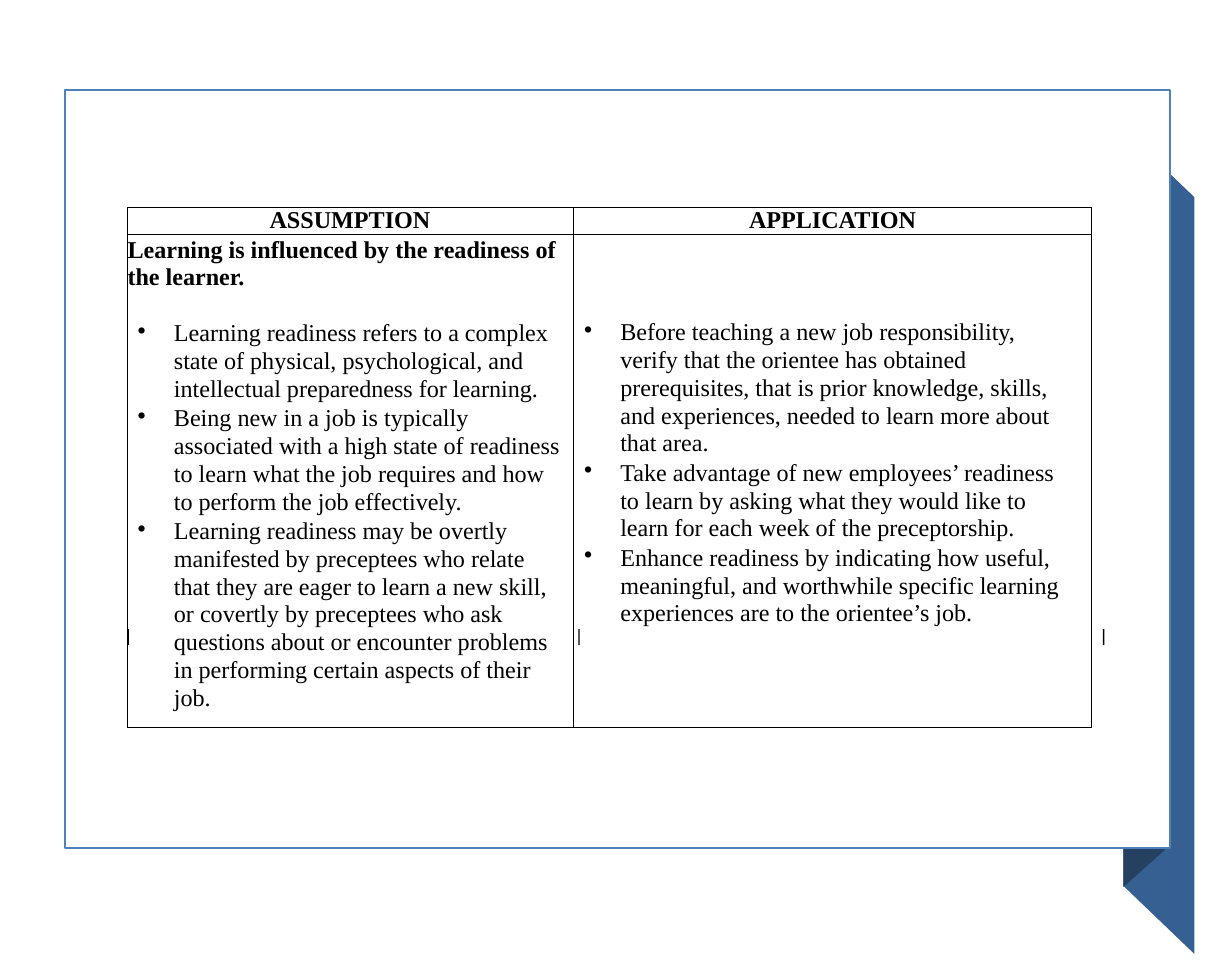
from dataclasses import dataclass

from lxml.etree import SubElement
from pptx import Presentation
from pptx.dml.color import RGBColor as RGB
from pptx.enum.shapes import MSO_SHAPE as SHAPE
from pptx.enum.text import PP_ALIGN as ALIGN
from pptx.oxml.ns import qn
from pptx.util import Inches, Pt

# Content
HEADINGS = ["ASSUMPTION", "APPLICATION"]
PRINCIPLE = "Learning is influenced by the readiness of the learner."
ASSUMPTIONS = [
    "Learning readiness refers to a complex state of physical, psychological, "
    "and intellectual preparedness for learning.",
    "Being new in a job is typically associated with a high state of readiness "
    "to learn what the job requires and how to perform the job effectively.",
    "Learning readiness may be overtly manifested by preceptees who relate that "
    "they are eager to learn a new skill, or covertly by preceptees who ask "
    "questions about or encounter problems in performing certain aspects of "
    "their job.",
]
APPLICATIONS = [
    "Before teaching a new job responsibility, verify that the orientee has "
    "obtained prerequisites, that is prior knowledge, skills, and experiences, "
    "needed to learn more about that area.",
    "Take advantage of new employees’ readiness to learn by asking what they "
    "would like to learn for each week of the preceptorship.",
    "Enhance readiness by indicating how useful, meaningful, and worthwhile "
    "specific learning experiences are to the orientee’s job.",
]


@dataclass(frozen=True)
class Theme:
    font: str = "Times New Roman"
    size: float = 12
    heading_leading: float = 13.3
    body_leading: float = 13.8
    bullet_gap: float = 0.8
    ink: str = "000000"
    paper: str = "FFFFFF"
    frame: str = "4F81BD"
    ribbon: str = "376092"
    fold: str = "254061"
    rule: float = 0.5


THEME = Theme()

# Layout, in inches
SLIDE_SIZE = (8.5, 6.65)
FRAME = (0.45, 0.62, 7.62, 5.23)
RIBBON = [(8.24, 6.58), (7.75, 6.11), (7.75, 0.89), (8.24, 1.36)]
FOLD = [(8.04, 5.86), (7.75, 6.12), (7.75, 0.88), (8.04, 0.62)]
TABLE_LEFT, TABLE_TOP = 0.88, 1.43
COLUMNS, ROWS = [3.08, 3.57], [0.18, 3.4]
TICK_LEFTS, TICK_TOP, TICK_SIZE = [0.88, 3.99, 7.61], 4.34, (0.01, 0.11)


def paint(shape, fill, line=None):
    shape.shadow.inherit = False
    shape.fill.solid()
    shape.fill.fore_color.rgb = RGB.from_string(fill)
    if line:
        shape.line.color.rgb = RGB.from_string(line)
        shape.line.width = Pt(1)
    else:
        shape.line.fill.background()


def add_outline(slide, points, fill):
    corners = [(Inches(x), Inches(y)) for x, y in points]
    builder = slide.shapes.build_freeform(*corners[0])
    builder.add_line_segments(corners[1:], close=True)
    paint(builder.convert_to_shape(), fill)


def add_box(slide, box, fill, line=None):
    paint(slide.shapes.add_shape(SHAPE.RECTANGLE, *map(Inches, box)), fill, line)


def style_cell(cell, top=0, right=0):
    cell.margin_left = cell.margin_bottom = 0
    cell.margin_top, cell.margin_right = Inches(top), Inches(right)
    props = cell._tc.get_or_add_tcPr()
    for side in ("a:lnL", "a:lnR", "a:lnT", "a:lnB"):
        border = SubElement(props, qn(side), w=str(Pt(THEME.rule)))
        SubElement(SubElement(border, qn("a:solidFill")), qn("a:srgbClr"), val=THEME.ink)
    cell.fill.background()


def write(paragraph, text, leading, before=0, bold=False, left=0, hanging=0):
    paragraph.line_spacing = Pt(leading)
    paragraph.space_before = Pt(before)
    props = paragraph._p.get_or_add_pPr()
    props.set("marL", str(Inches(left)))
    props.set("indent", str(-Inches(hanging)))
    if hanging:
        SubElement(props, qn("a:buChar"), char="•")
    run = paragraph.add_run()
    run.text = text
    run.font.name, run.font.size, run.font.bold = THEME.font, Pt(THEME.size), bold
    run.font.color.rgb = RGB.from_string(THEME.ink)


def write_bullet(paragraph, text, before):
    write(paragraph, text, THEME.body_leading, before, left=0.32, hanging=0.25)


def add_learning_table(slide):
    table = slide.shapes.add_table(
        len(ROWS), len(COLUMNS), Inches(TABLE_LEFT), Inches(TABLE_TOP),
        Inches(sum(COLUMNS)), Inches(sum(ROWS))).table
    table.first_row = table.horz_banding = False
    for column, width in zip(table.columns, COLUMNS):
        column.width = Inches(width)
    for row, height in zip(table.rows, ROWS):
        row.height = Inches(height)

    # Heading row: the first is indented, the second centred
    for index, heading in enumerate(HEADINGS):
        cell = table.cell(0, index)
        style_cell(cell)
        paragraph = cell.text_frame.paragraphs[0]
        write(paragraph, heading, THEME.heading_leading, bold=True,
              left=0 if index else 0.98)
        paragraph.alignment = ALIGN.CENTER if index else ALIGN.LEFT

    # Assumption column: bold principle, then bullets
    assumption = table.cell(1, 0)
    style_cell(assumption, top=0.01, right=0.06)
    frame = assumption.text_frame
    write(frame.paragraphs[0], PRINCIPLE, THEME.body_leading, 0.5, bold=True)
    for index, point in enumerate(ASSUMPTIONS):
        write_bullet(frame.add_paragraph(), point, THEME.bullet_gap if index else 14)

    # Application column: bullets start lower, beside the others
    application = table.cell(1, 1)
    style_cell(application, top=0.58, right=0.19)
    frame = application.text_frame
    for index, point in enumerate(APPLICATIONS):
        paragraph = frame.add_paragraph() if index else frame.paragraphs[0]
        write_bullet(paragraph, point, THEME.bullet_gap if index else 0)


def main():
    deck = Presentation()
    deck.slide_width, deck.slide_height = map(Inches, SLIDE_SIZE)
    slide = deck.slides.add_slide(deck.slide_layouts[6])

    # Folded ribbon behind the framed page
    add_outline(slide, RIBBON, THEME.ribbon)
    add_outline(slide, FOLD, THEME.fold)
    add_box(slide, FRAME, THEME.paper, THEME.frame)

    add_learning_table(slide)

    # Small ticks at the column edges
    for left in TICK_LEFTS:
        add_box(slide, (left, TICK_TOP, *TICK_SIZE), THEME.ink)

    deck.save("out.pptx")


if __name__ == "__main__":
    main()
